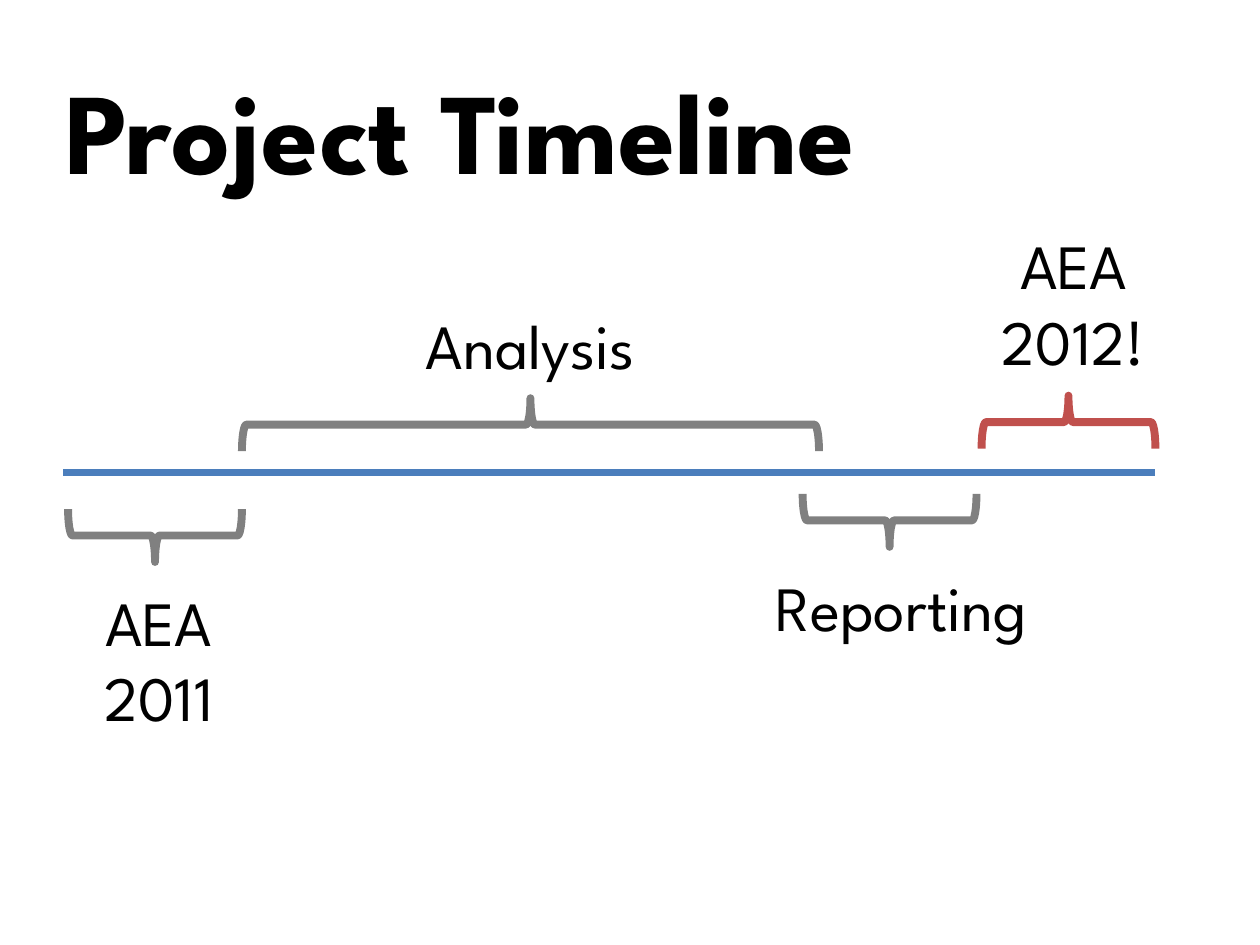
from dataclasses import dataclass

import pptx
import pptx.dml.color
import pptx.enum.shapes
import pptx.enum.text
import pptx.oxml.ns
import pptx.slide
import pptx.text.text
import pptx.util
from lxml import etree
from pptx.util import Inches


@dataclass(frozen=True)
class Theme:
    font: str = "League Spartan"
    text: str = "000000"
    timeline: str = "4B7EBC"
    phase: str = "808080"
    highlight: str = "C0504D"
    title_size: int = 66
    label_size: int = 36
    line_width: float = 4.5


@dataclass(frozen=True)
class Phase:
    label: str
    center_x: float
    center_y: float
    span: float
    rotation: int
    label_box: tuple[float, float, float, float]
    color: str


THEME = Theme()
BRACE_DEPTH = 0.42
POINTS_DOWN, POINTS_UP = 90, 270

PHASES = [
    Phase("AEA 2011", 1.23, 4.25, 1.38, POINTS_DOWN, (0.25, 4.58, 2.02, 1.31), THEME.phase),
    Phase("Analysis", 4.21, 3.37, 4.58, POINTS_UP, (3.04, 2.38, 2.34, 0.71), THEME.phase),
    Phase("Reporting", 7.06, 4.13, 1.38, POINTS_DOWN, (5.92, 4.46, 2.47, 0.71), THEME.phase),
    Phase("AEA 2012!", 8.48, 3.35, 1.38, POINTS_UP, (7.42, 1.75, 2.2, 1.31), THEME.highlight),
]


def rgb(color: str) -> pptx.dml.color.RGBColor:
    return pptx.dml.color.RGBColor.from_string(color)


def write_text(
    frame: pptx.text.text.TextFrame,
    text: str,
    size: int,
    alignment: pptx.enum.text.PP_ALIGN,
    bold: bool = False,
) -> None:
    frame.word_wrap = True
    frame.auto_size = pptx.enum.text.MSO_AUTO_SIZE.NONE
    frame.vertical_anchor = pptx.enum.text.MSO_ANCHOR.TOP
    frame.text = text
    paragraph = frame.paragraphs[0]
    paragraph.alignment = alignment
    paragraph.font.name = THEME.font
    paragraph.font.size = pptx.util.Pt(size)
    paragraph.font.bold = bold
    paragraph.font.color.rgb = rgb(THEME.text)


def add_title(slide: pptx.slide.Slide, text: str) -> None:
    title = slide.shapes.title
    title.left, title.top = Inches(0.42), Inches(0.42)
    title.width, title.height = Inches(8.1), Inches(1.21)
    write_text(title.text_frame, text, THEME.title_size, pptx.enum.text.PP_ALIGN.LEFT, bold=True)


def add_timeline(slide: pptx.slide.Slide, left: float, right: float, y: float) -> None:
    connector = slide.shapes.add_connector(
        pptx.enum.shapes.MSO_CONNECTOR.STRAIGHT, Inches(left), Inches(y), Inches(right), Inches(y)
    )
    connector.line.color.rgb = rgb(THEME.timeline)
    connector.line.width = pptx.util.Pt(THEME.line_width)
    properties = connector.element.find(pptx.oxml.ns.qn("p:spPr"))
    etree.SubElement(properties, pptx.oxml.ns.qn("a:effectLst"))


def add_phase(slide: pptx.slide.Slide, phase: Phase) -> None:
    """Group a brace, rotated to lie along the timeline, with its label."""
    group = slide.shapes.add_group_shape()
    brace = group.shapes.add_shape(
        pptx.enum.shapes.MSO_SHAPE.RIGHT_BRACE,
        Inches(phase.center_x - BRACE_DEPTH / 2),
        Inches(phase.center_y - phase.span / 2),
        Inches(BRACE_DEPTH),
        Inches(phase.span),
    )
    brace.rotation = phase.rotation
    brace.shadow.inherit = False
    brace.fill.background()
    brace.line.color.rgb = rgb(phase.color)
    brace.line.width = pptx.util.Pt(THEME.line_width)

    label = group.shapes.add_textbox(*map(Inches, phase.label_box))
    write_text(label.text_frame, phase.label, THEME.label_size, pptx.enum.text.PP_ALIGN.CENTER)


def main() -> None:
    presentation = pptx.Presentation()
    presentation.slide_width, presentation.slide_height = Inches(10), Inches(7.5)
    title_only = presentation.slide_layouts.get_by_name("Title Only")
    slide = presentation.slides.add_slide(title_only)
    add_title(slide, "Project Timeline")
    add_timeline(slide, left=0.5, right=9.17, y=3.75)
    for phase in PHASES:
        add_phase(slide, phase)
    presentation.save("out.pptx")


if __name__ == "__main__":
    main()
